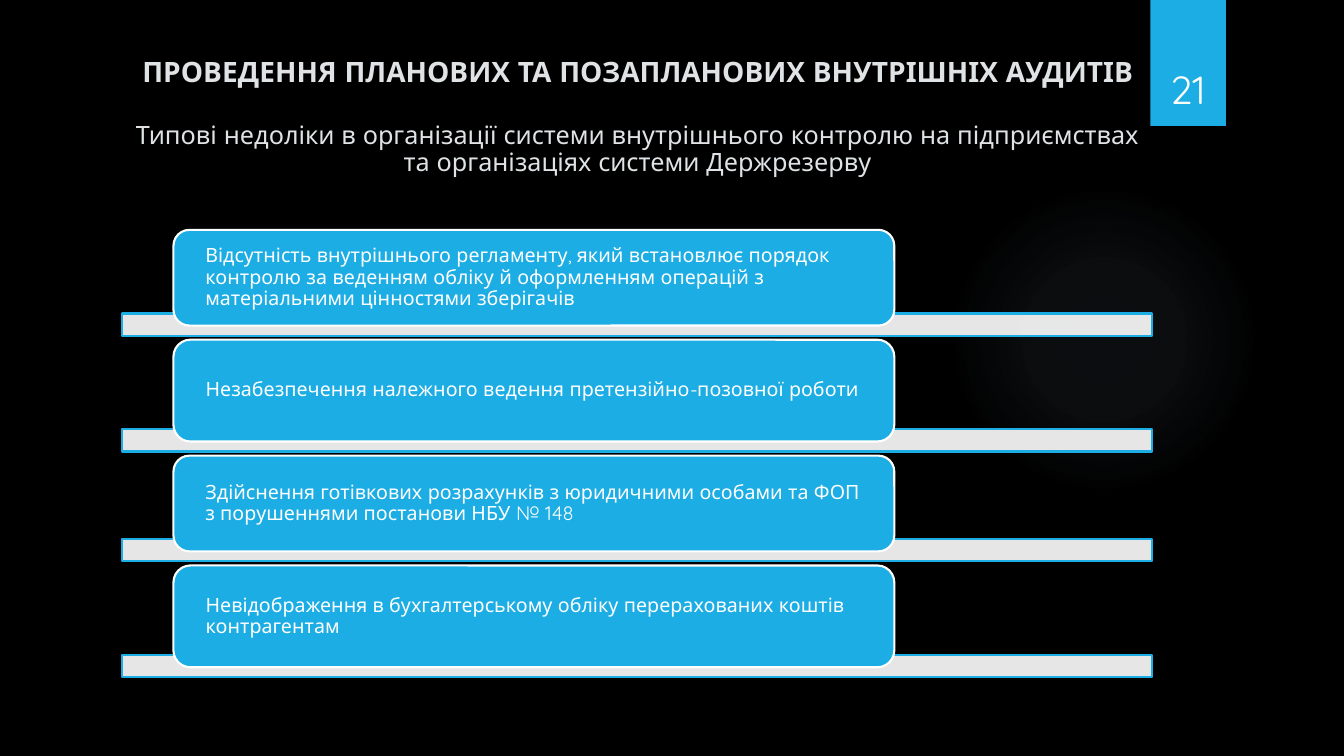
from lxml import etree
from pptx import Presentation
from pptx.dml.color import RGBColor
from pptx.enum import shapes, text
from pptx.oxml import ns
from pptx.util import Inches, Pt

FONT = "Quicksand"
COLORS = {"back": "000000", "blue": "1CADE4", "white": "FFFFFF",
          "title": "DFE3E5", "glow": "A0C1D5"}
TITLE = "ПРОВЕДЕННЯ ПЛАНОВИХ ТА ПОЗАПЛАНОВИХ ВНУТРІШНІХ АУДИТІВ"
LEAD = ("Типові недоліки в організації системи внутрішнього контролю "
        "на підприємствах та організаціях системи Держрезерву")
# Text and height of each box
FLAWS = [
    ("Відсутність внутрішнього регламенту, який встановлює порядок контролю "
     "за веденням обліку й оформленням операцій з матеріальними цінностями "
     "зберігачів", 0.95),
    ("Незабезпечення належного ведення претензійно-позовної роботи", 1.01),
    ("Здійснення готівкових розрахунків з юридичними особами та ФОП "
     "з порушеннями постанови НБУ № 148", 0.95),
    ("Невідображення в бухгалтерському обліку перерахованих коштів "
     "контрагентам", 1.01),
]
TOP, GAP, LAP = 2.28, 0.14, 0.12
KINDS = shapes.MSO_SHAPE


def color(name):
    return RGBColor.from_string(COLORS[name])


def add_box(slide, kind, box, fill, line=None):
    shape = slide.shapes.add_shape(kind, *map(Inches, box))
    shape.shadow.inherit = False
    shape.fill.solid()
    shape.fill.fore_color.rgb = color(fill)
    if line:
        shape.line.color.rgb = color(line)
        shape.line.width = Pt(1.5)
    else:
        shape.line.fill.background()
    return shape


def style(para, size, name, align, bold=False):
    para.alignment = align
    for run in para.runs:
        run.font.name = FONT
        run.font.size = Pt(size)
        run.font.bold = bold
        run.font.color.rgb = color(name)


def set_frame(frame, anchor, side=0.1, edge=0.05):
    frame.word_wrap = True
    frame.auto_size = text.MSO_AUTO_SIZE.NONE
    frame.vertical_anchor = anchor
    frame.margin_left = frame.margin_right = Inches(side)
    frame.margin_top = frame.margin_bottom = Inches(edge)


def set_alpha(node, percent):
    etree.SubElement(node, ns.qn("a:alpha")).set("val", str(percent * 1000))


def add_glow(slide):
    """Faint round light that fades out from its centre."""
    glow = add_box(slide, KINDS.OVAL, (9.41, 1.83, 3.08, 3.08), "glow")
    props = glow.fill._xPr
    solid = props.find(ns.qn("a:solidFill"))
    grad = etree.Element(ns.qn("a:gradFill"), rotWithShape="1")
    stops = etree.SubElement(grad, ns.qn("a:gsLst"))
    for place, percent in ((0, 7), (36, 6), (69, 0), (100, 0)):
        stop = etree.SubElement(stops, ns.qn("a:gs"), pos=str(place * 1000))
        tint = etree.SubElement(stop, ns.qn("a:srgbClr"), val=COLORS["glow"])
        set_alpha(tint, percent)
    shade = etree.SubElement(grad, ns.qn("a:path"), path="circle")
    etree.SubElement(shade, ns.qn("a:fillToRect"),
                     l="50000", t="50000", r="50000", b="50000")
    props.replace(solid, grad)


def add_title(slide):
    title = slide.shapes.title
    title.left, title.top = Inches(1.24), Inches(0.5)
    title.width, title.height = Inches(10.17), Inches(1.34)
    frame = title.text_frame
    set_frame(frame, text.MSO_ANCHOR.MIDDLE)
    frame.text = f"{TITLE}\n{LEAD}"
    head, lead = frame.paragraphs
    style(head, 20, "title", text.PP_ALIGN.CENTER, True)
    style(lead, 18, "title", text.PP_ALIGN.CENTER)
    head.line_spacing = lead.line_spacing = 0.9
    head.space_before = Pt(0)
    lead.space_before = Pt(24)


def add_flaw(slide, words, top, height):
    """Pale bar with a rounded text box over its upper edge."""
    bar = add_box(slide, KINDS.RECTANGLE,
                  (1.21, top + height - LAP, 10.22, 0.22), "white", "blue")
    set_alpha(bar.fill._xPr.find(".//" + ns.qn("a:srgbClr")), 90)
    box = add_box(slide, KINDS.ROUNDED_RECTANGLE,
                  (1.72, top, 7.15, height), "blue", "white")
    frame = box.text_frame
    set_frame(frame, text.MSO_ANCHOR.MIDDLE, 0.27, 0)
    frame.text = words
    para = frame.paragraphs[0]
    para.line_spacing = 0.9
    style(para, 14, "white", text.PP_ALIGN.LEFT)


def add_number(slide):
    box = slide.shapes.add_textbox(*map(Inches, (11.32, 0.32, 0.92, 0.84)))
    set_frame(box.text_frame, text.MSO_ANCHOR.BOTTOM)
    box.text_frame.text = "21"
    style(box.text_frame.paragraphs[0], 28, "white", text.PP_ALIGN.CENTER)


def main():
    deck = Presentation()
    deck.slide_width, deck.slide_height = Inches(13.33), Inches(7.5)
    slide = deck.slides.add_slide(deck.slide_layouts[5])
    slide.background.fill.solid()
    slide.background.fill.fore_color.rgb = color("back")
    add_glow(slide)
    add_box(slide, KINDS.RECTANGLE, (11.41, 0, 0.75, 1.25), "blue")
    add_title(slide)
    top = TOP
    for words, height in FLAWS:
        add_flaw(slide, words, top, height)
        top += height + GAP
    add_number(slide)
    deck.save("out.pptx")


if __name__ == "__main__":
    main()
